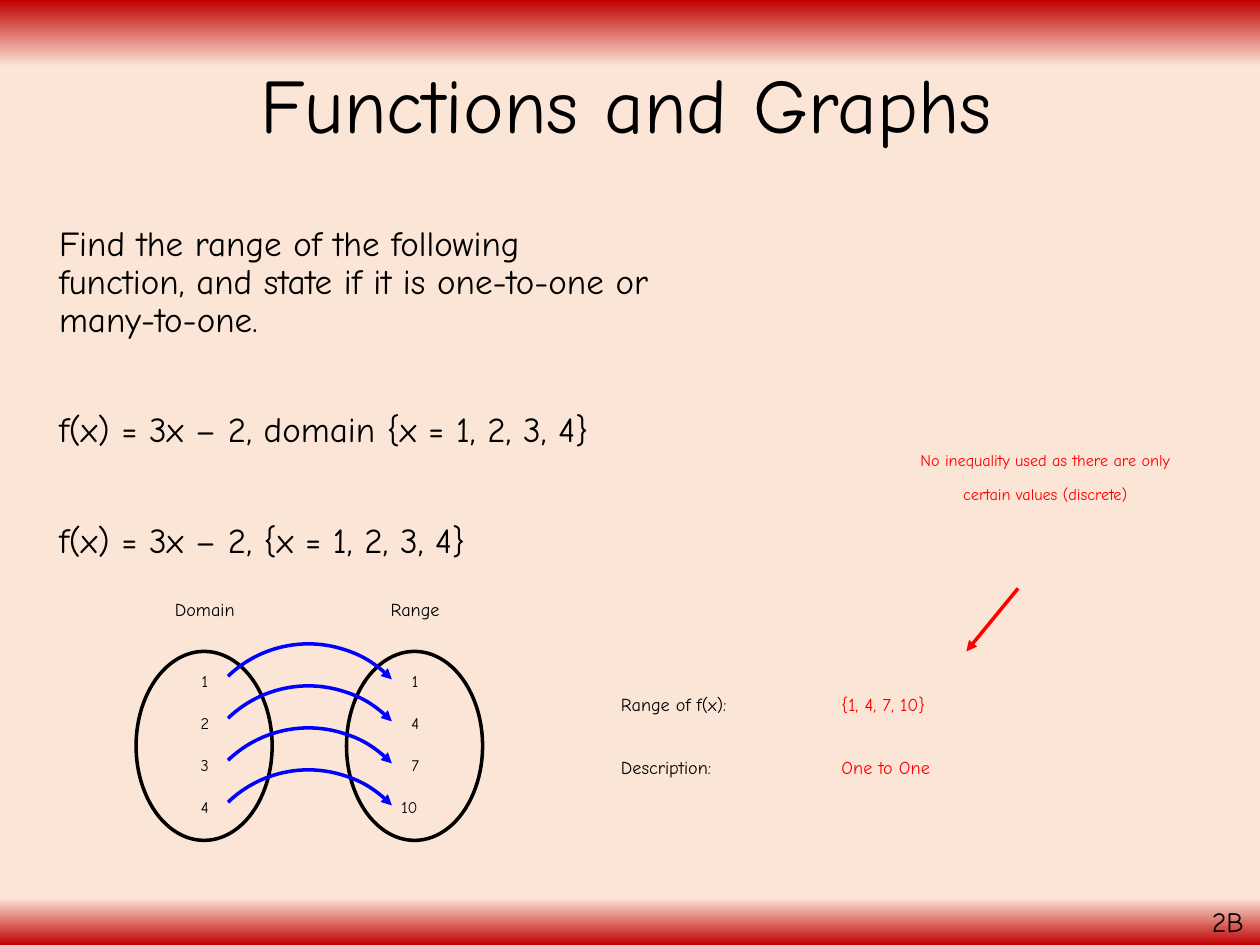
from lxml.etree import SubElement
from pptx import Presentation
from pptx.dml.color import RGBColor
from pptx.enum.shapes import MSO_CONNECTOR, MSO_SHAPE
from pptx.enum.text import MSO_ANCHOR, PP_ALIGN
from pptx.oxml.ns import qn
from pptx.util import Inches, Pt

FONT = "Comic Neue"
BLACK = RGBColor(0x00, 0x00, 0x00)
RED = RGBColor(0xFF, 0x00, 0x00)
BLUE = RGBColor(0x00, 0x00, 0xFF)
CREAM = RGBColor(0xFB, 0xE5, 0xD6)
DARK_RED = RGBColor(0xC0, 0x00, 0x00)
RAISED = "30000"


def paint_background(slide):
    """Fill the slide with cream that fades to dark red at top and bottom."""
    fill = slide.background.fill
    fill.gradient()
    fill.gradient_angle = 270
    stop_list = next(slide.background._cSld.iter(qn("a:gsLst")))
    for stop in list(stop_list):
        stop_list.remove(stop)
    for percent, color in ((0, DARK_RED), (7, CREAM), (95, CREAM), (100, DARK_RED)):
        stop = SubElement(stop_list, qn("a:gs"), pos=str(percent * 1000))
        SubElement(stop, qn("a:srgbClr"), val=str(color))


def add_text(slide, box, paragraphs, size, color=BLACK, align=PP_ALIGN.LEFT, raised=False):
    """Add a wrapping text box at (left, top, width, height) and return its frame."""
    frame = slide.shapes.add_textbox(*map(Inches, box)).text_frame
    frame.word_wrap = True
    frame.text = "\n".join(paragraphs)
    for paragraph in frame.paragraphs:
        paragraph.alignment = align
        for run in paragraph.runs:
            run.font.name = FONT
            run.font.size = Pt(size)
            run.font.color.rgb = color
            if raised:
                run._r.get_or_add_rPr().set("baseline", RAISED)
    return frame


def style_line(shape, color, arrow=False):
    """Give a shape or connector a plain two-point line, with an optional arrowhead."""
    shape.line.color.rgb = color
    shape.line.width = Pt(2)
    if arrow:
        SubElement(shape.line._get_or_add_ln(), qn("a:tailEnd"), type="triangle")


def add_title(slide, box):
    """Add the centred slide title."""
    frame = add_text(slide, box, ["Functions and Graphs"], 44, align=PP_ALIGN.CENTER)
    frame.vertical_anchor = MSO_ANCHOR.MIDDLE
    frame.paragraphs[0].line_spacing = 0.9


def add_question(slide, box):
    """Add the question and the two forms of the function."""
    frame = add_text(slide, box, [
        "Find the range of the following function, and state if it is one-to-one or many-to-one.",
        "f(x) = 3x – 2, domain {x = 1, 2, 3, 4}",
        "f(x) = 3x – 2, {x = 1, 2, 3, 4}",
    ], 20)
    for index, paragraph in enumerate(frame.paragraphs):
        paragraph.line_spacing = 0.9
        paragraph.space_before = Pt(41.5 if index else 10)
        paragraph._p.get_or_add_pPr().set("marL", str(Inches(0.25)))


def add_set(slide, left, top, label, values, pitch):
    """Add a labelled ellipse holding a column of values."""
    add_text(slide, (left - 0.08, top - 0.5, 1.25, 0.4), [label], 18,
             align=PP_ALIGN.CENTER, raised=True)
    for index, value in enumerate(values):
        width = 0.5 if len(value) > 1 else 0.41
        add_text(slide, (left + 0.75 - width, top + 0.08 + index * pitch, width, 0.37),
                 [value], 16, align=PP_ALIGN.CENTER, raised=True)
    ellipse = slide.shapes.add_shape(
        MSO_SHAPE.OVAL, Inches(left), Inches(top), Inches(1.08), Inches(1.5))
    ellipse.shadow.inherit = False
    ellipse.fill.background()
    style_line(ellipse, BLACK)


def add_mapping_arc(slide, left, top, side):
    """Add a quarter-circle arrow that is turned to arch from left to right."""
    left, top, side = Inches(left), Inches(top), Inches(side)
    builder = slide.shapes.build_freeform(left, top)
    builder.add_line_segments([(left + side, top + side)], close=False)
    arc = builder.convert_to_shape()
    segment = next(arc._element.iter(qn("a:lnTo")))
    curve = SubElement(segment.getparent(), qn("a:arcTo"), wR=str(side), hR=str(side),
                       stAng="16200000", swAng="5400000")
    segment.getparent().replace(segment, curve)
    arc.rotation = 316.1
    arc.shadow.inherit = False
    arc.fill.background()
    style_line(arc, BLUE, arrow=True)


def add_mapping(slide, left, top):
    """Add the domain and range sets with the arrows between them."""
    pitch = 1 / 3
    domain, images = ["1", "2", "3", "4"], ["1", "4", "7", "10"]
    add_set(slide, left, top, "Domain", domain, pitch)
    add_set(slide, left + 1.67, top, "Range", images, pitch)
    for index in range(len(domain)):
        add_mapping_arc(slide, left + 0.92, top - 0.25 + index * pitch, 0.92)


def add_answers(slide, left, top):
    """Add the rows that state the range and the description."""
    rows = (("Range of f(x):", "{1, 4, 7, 10}"), ("Description:", "One to One"))
    for index, (label, answer) in enumerate(rows):
        row_top = top + index * 0.5
        add_text(slide, (left, row_top, 1.83, 0.4), [label], 18, raised=True)
        add_text(slide, (left + 1.75, row_top, 1.58, 0.4), [answer], 18, RED, raised=True)


def add_note(slide, box):
    """Add the red remark and the arrow from it to the answer."""
    left, top, width, height = box
    add_text(slide, box, ["No inequality used as there are only certain values (discrete)"],
             16, RED, PP_ALIGN.CENTER, raised=True)
    bottom = top + height
    arrow = slide.shapes.add_connector(
        MSO_CONNECTOR.STRAIGHT, Inches(left + 0.91), Inches(bottom),
        Inches(left + 0.5), Inches(bottom + 0.5))
    style_line(arrow, RED, arrow=True)
    SubElement(arrow._element.spPr, qn("a:effectLst"))


def main():
    """Build the slide and save it."""
    presentation = Presentation()
    presentation.slide_width, presentation.slide_height = Inches(10), Inches(7.5)
    slide = presentation.slides.add_slide(presentation.slide_layouts[6])
    paint_background(slide)
    add_question(slide, (0.12, 1.75, 5.19, 4.95))
    add_mapping(slide, 1.08, 5.17)
    add_answers(slide, 4.83, 5.42)
    add_note(slide, (7.17, 3.5, 2.25, 1.17))
    add_title(slide, (0.66, 0.14, 8.62, 1.45))
    add_text(slide, (9.52, 7.13, 0.56, 0.37), ["2B"], 16)
    presentation.save("out.pptx")


if __name__ == "__main__":
    main()
